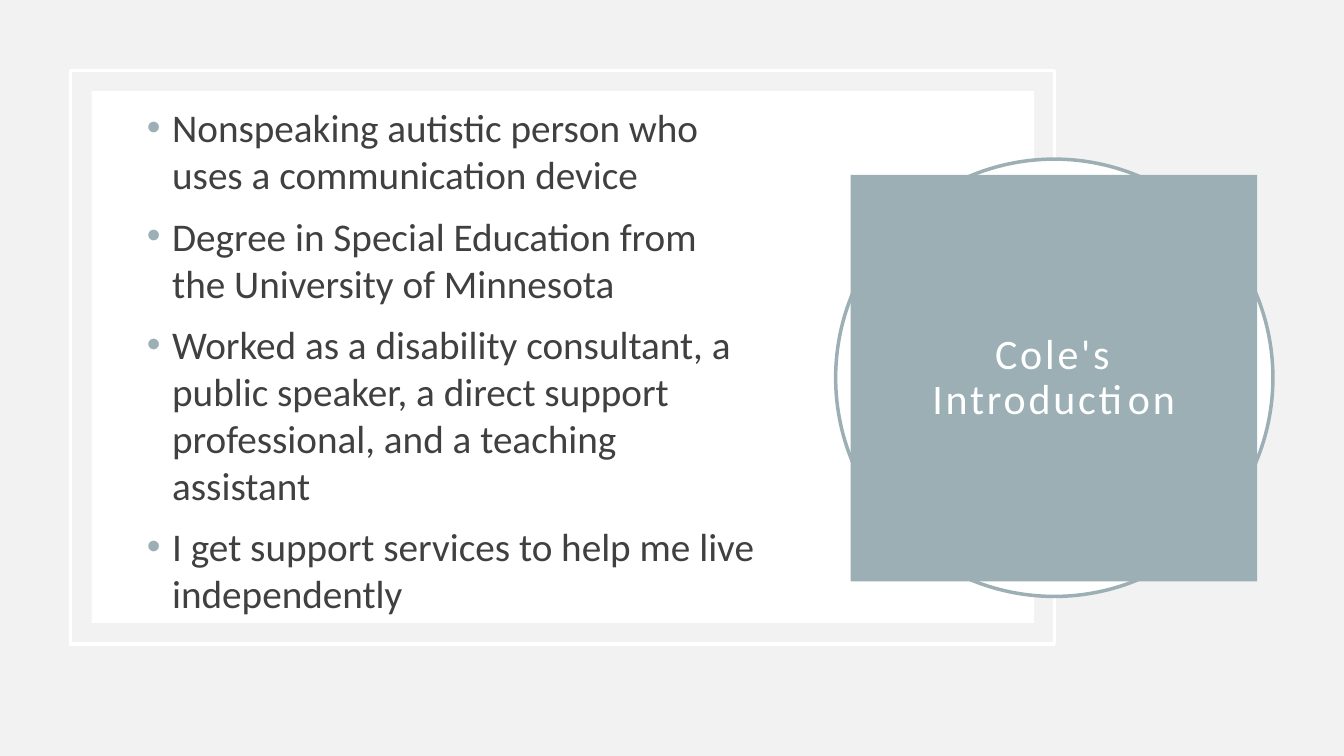
from dataclasses import dataclass

from lxml.etree import SubElement
from pptx import Presentation
from pptx.dml.color import RGBColor
from pptx.enum.shapes import MSO_SHAPE as Shape
from pptx.enum.text import MSO_ANCHOR as Anchor, PP_ALIGN as Align
from pptx.oxml.ns import qn
from pptx.util import Cm, Pt


@dataclass(frozen=True)
class Theme:
    font: str = "Calibri"
    backdrop: str = "F2F2F2"
    panel: str = "FFFFFF"
    accent: str = "9BAFB5"
    text: str = "404040"
    body_size: float = 28
    title_size: float = 30
    outline: float = 2.5
    bullet_indent: float = 0.64


THEME = Theme()

FACTS = [
    "Nonspeaking autistic person who uses a communication device",
    "Degree in Special Education from the University of Minnesota",
    "Worked as a disability consultant, a public speaker, a direct support "
    "professional, and a teaching assistant",
    "I get support services to help me live independently",
]


def rgb(color):
    return RGBColor.from_string(color)


def add_block(s, kind, box, fill=None, line=None):
    sp = s.shapes.add_shape(kind, *map(Cm, box))
    sp.shadow.inherit = False
    if fill:
        sp.fill.solid()
        sp.fill.fore_color.rgb = rgb(fill)
    else:
        sp.fill.background()
    if line:
        sp.line.color.rgb = rgb(line)
        sp.line.width = Pt(THEME.outline)
    else:
        sp.line.fill.background()
    return sp


def add_run(p, text, size, color):
    r = p.add_run()
    r.text = text
    r.font.name = THEME.font
    r.font.size = Pt(size)
    r.font.color.rgb = rgb(color)
    return r


def set_bullet(p):
    pPr = p._p.get_or_add_pPr()
    indent = Cm(THEME.bullet_indent)
    pPr.set("marL", str(indent))
    pPr.set("indent", str(-indent))
    color = SubElement(pPr, qn("a:buClr"))
    SubElement(color, qn("a:srgbClr"), val=THEME.accent)
    SubElement(pPr, qn("a:buFont"), typeface="Arial")
    SubElement(pPr, qn("a:buChar"), char="•")


def add_bullets(s, box, items):
    tf = s.shapes.add_textbox(*map(Cm, box)).text_frame
    tf.word_wrap = True
    tf.vertical_anchor = Anchor.MIDDLE
    tf.margin_bottom = Cm(0.87)
    for i, item in enumerate(items):
        p = tf.add_paragraph() if i else tf.paragraphs[0]
        p.space_before = Pt(10)
        set_bullet(p)
        add_run(p, item, THEME.body_size, THEME.text)


def add_title(s, box, text):
    tf = add_block(s, Shape.RECTANGLE, box, fill=THEME.accent).text_frame
    tf.word_wrap = True
    tf.vertical_anchor = Anchor.MIDDLE
    tf.margin_left = tf.margin_right = Cm(1)
    p = tf.paragraphs[0]
    p.alignment = Align.CENTER
    p.line_spacing = 0.9
    r = add_run(p, text, THEME.title_size, THEME.panel)
    r.font._element.set("spc", "200")


def main():
    prs = Presentation()
    prs.slide_width, prs.slide_height = Cm(33.87), Cm(19.05)
    s = prs.slides.add_slide(prs.slide_layouts[6])
    s.background.fill.solid()
    s.background.fill.fore_color.rgb = rgb(THEME.backdrop)

    # Framed panel
    add_block(s, Shape.RECTANGLE, (1.78, 1.78, 24.79, 14.45), line=THEME.panel)
    add_block(s, Shape.RECTANGLE, (2.31, 2.29, 23.75, 13.41), fill=THEME.panel)

    # Facts
    add_bullets(s, (3.45, 4.01, 15.88, 10.87), FACTS)

    # Title over its ring
    add_block(s, Shape.OVAL, (21.06, 4.01, 11.02, 11.02),
              fill=THEME.panel, line=THEME.accent)
    add_title(s, (21.44, 4.41, 10.24, 10.24), "Cole's Introduction")

    prs.save("out.pptx")


if __name__ == "__main__":
    main()
